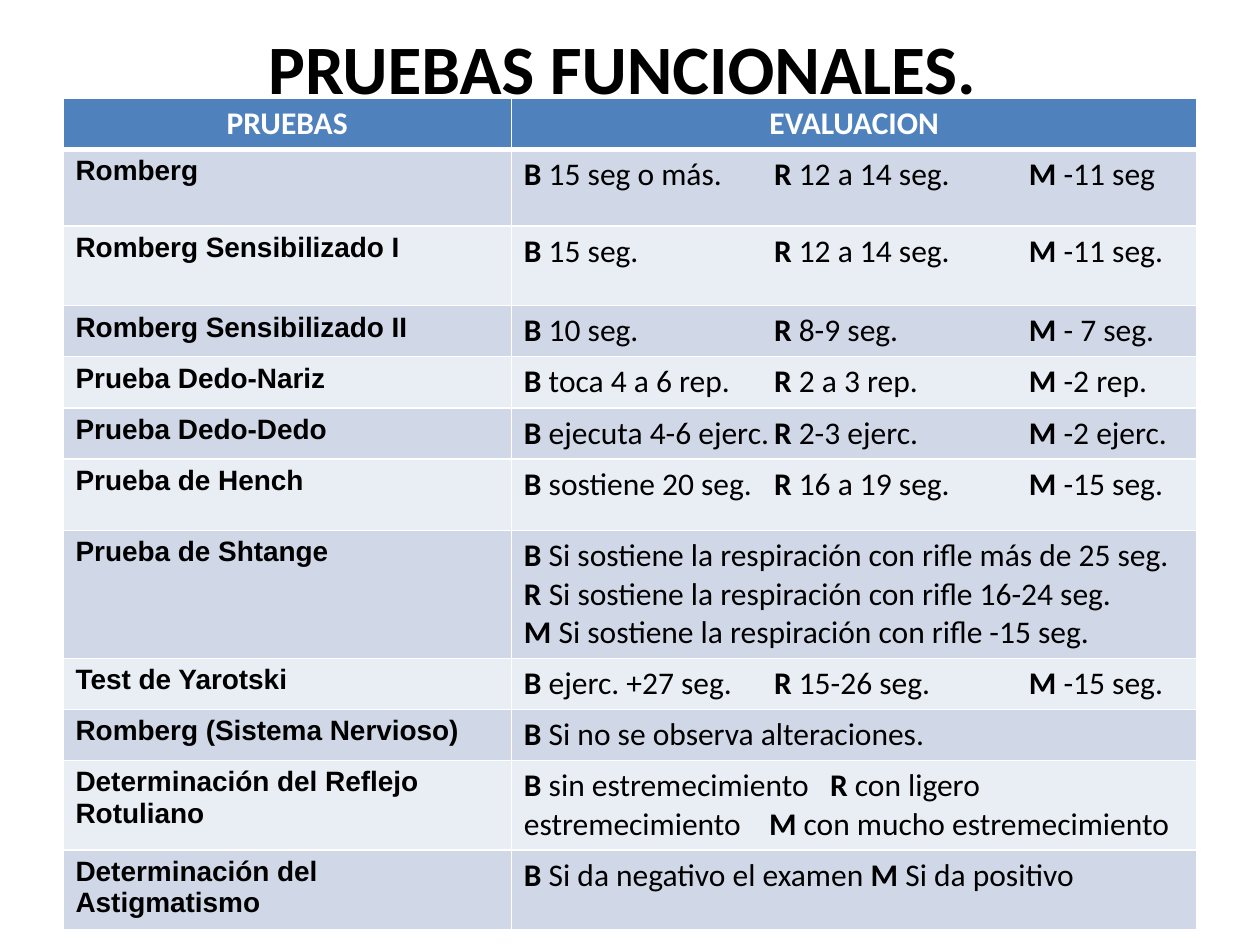
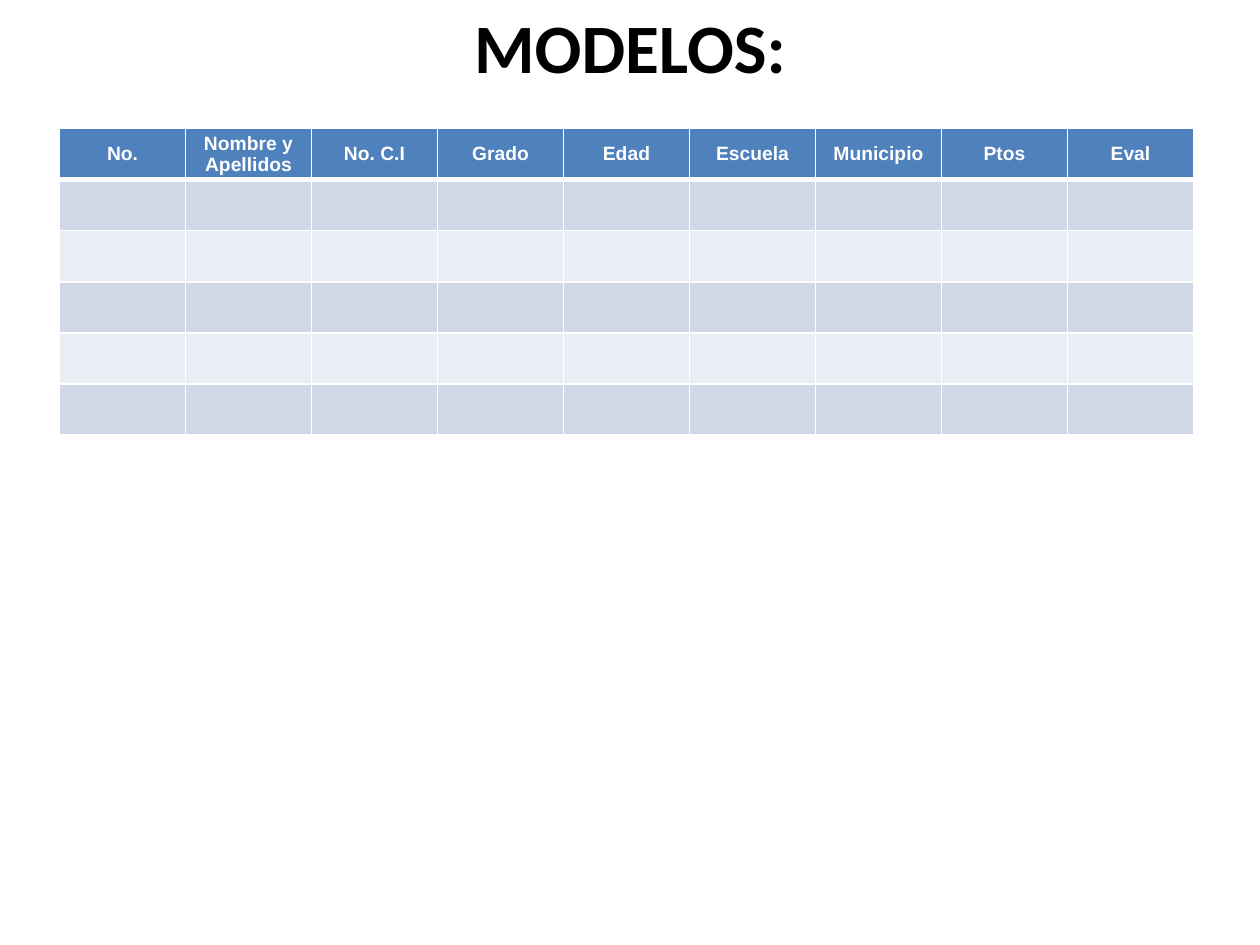
from lxml.etree import SubElement
from pptx import Presentation
from pptx.dml.color import RGBColor
from pptx.enum.text import MSO_ANCHOR as Anchor, PP_ALIGN as Align
from pptx.oxml.ns import qn
from pptx.util import Cm, Pt

# Content
TESTS_TITLE = "PRUEBAS FUNCIONALES. "
TESTS_HEADER = ["PRUEBAS", "EVALUACION"]
LINE, TALL = 1.03, 1.55  # row heights in cm
GRADE_STOPS = [5.04, 10.18]
REFLEX_STOPS = [4.94, 6.17]

# Test, row height, evaluation lines of (grade, criterion), tab stops
TESTS = [
    ("Romberg", TALL,
     [[("B", "15 seg o más."), ("R", "12 a 14 seg."), ("M", "-11 seg")]], GRADE_STOPS),
    ("Romberg Sensibilizado I", 1.6,
     [[("B", "15 seg."), ("R", "12 a 14 seg."), ("M", "-11 seg.")]], GRADE_STOPS),
    ("Romberg Sensibilizado II", LINE,
     [[("B", "10 seg."), ("R", "8-9 seg."), ("M", "- 7 seg.")]], GRADE_STOPS),
    ("Prueba Dedo-Nariz", LINE,
     [[("B", "toca 4 a 6 rep."), ("R", "2 a 3 rep."), ("M", "-2 rep.")]], GRADE_STOPS),
    ("Prueba Dedo-Dedo", LINE,
     [[("B", "ejecuta 4-6 ejerc."), ("R", "2-3 ejerc."), ("M", "-2 ejerc.")]], GRADE_STOPS),
    ("Prueba de Hench", 1.44,
     [[("B", "sostiene 20 seg."), ("R", "16 a 19 seg."), ("M", "-15 seg.")]], GRADE_STOPS),
    ("Prueba de Shtange", 2.58,
     [[("B", "Si sostiene la respiración con rifle más de 25 seg.")],
      [("R", "Si sostiene la respiración con rifle 16-24 seg.")],
      [("M", "Si sostiene la respiración con rifle -15 seg.")]], []),
    ("Test de Yarotski", LINE,
     [[("B", "ejerc. +27 seg."), ("R", "15-26 seg."), ("M", "-15 seg.")]], GRADE_STOPS),
    ("Romberg (Sistema Nervioso)", LINE,
     [[("B", "Si no se observa alteraciones.")]], []),
    ("Determinación del Reflejo Rotuliano", 1.8,
     [[("B", "sin estremecimiento"), ("R", "con ligero estremecimiento"),
       ("M", "con mucho estremecimiento")]], REFLEX_STOPS),
    ("Determinación del Astigmatismo", 1.5,
     [[("B", "Si da negativo el examen"), ("M", "Si da positivo")]], [6.99]),
]

FORMS_TITLE = "MODELOS:"
FORMS_HEADER = ["No.", "Nombre y Apellidos", "No. C.I", "Grado", "Edad",
                "Escuela", "Municipio", "Ptos", "Eval"]
EMPTY_ROWS = 5

# Shared style
COLORS = {"header": "4F81BD", "odd": "D0D8E8", "even": "E9EDF4",
          "border": "FFFFFF", "light": "FFFFFF", "dark": "000000"}
SLIDE_W, SLIDE_H = 25.4, 19.05
MARGIN = 1.27
CONTENT_W = SLIDE_W - 2 * MARGIN


def color(key):
    return RGBColor.from_string(COLORS[key])


def style(paragraph, font_name, size, color_key="dark", bold=None, align=None):
    paragraph.alignment = align
    font = paragraph.font
    font.name, font.size, font.bold = font_name, Pt(size), bold
    font.color.rgb = color(color_key)


def add_title(slide, text, top):
    box = slide.shapes.add_textbox(Cm(MARGIN), Cm(top), Cm(CONTENT_W), Cm(1.85))
    frame = box.text_frame
    frame.word_wrap = True
    frame.vertical_anchor = Anchor.MIDDLE
    frame.text = text
    style(frame.paragraphs[0], "Calibri", 39.6, bold=True, align=Align.CENTER)


def add_borders(cell, bottom):
    props = cell._tc.get_or_add_tcPr()
    for side, width in (("L", 1), ("R", 1), ("T", 1), ("B", bottom)):
        line = SubElement(props, qn(f"a:ln{side}"), w=str(Pt(width)))
        fill = SubElement(line, qn("a:solidFill"))
        SubElement(fill, qn("a:srgbClr"), val=COLORS["border"])


def add_banded_table(slide, left, top, widths, heights):
    frame = slide.shapes.add_table(len(heights), len(widths), Cm(left), Cm(top),
                                   Cm(sum(widths)), Cm(sum(heights)))
    table = frame.table
    for column, width in zip(table.columns, widths):
        column.width = Cm(width)
    for index, (row, height) in enumerate(zip(table.rows, heights)):
        row.height = Cm(height)
        band = "header" if index == 0 else "odd" if index % 2 else "even"
        for cell in row.cells:
            add_borders(cell, bottom=1 if index else 3)
            cell.fill.solid()
            cell.fill.fore_color.rgb = color(band)
    return table


def fill_header(table, labels, font_name, size):
    for cell, label in zip(table.rows[0].cells, labels):
        cell.text = label
        style(cell.text_frame.paragraphs[0], font_name, size, "light", True, Align.CENTER)


def add_tab_stops(paragraph, stops):
    if stops:
        tabs = SubElement(paragraph._p.get_or_add_pPr(), qn("a:tabLst"))
        for stop in stops:
            SubElement(tabs, qn("a:tab"), pos=str(Cm(stop)), algn="l")


def fill_evaluation(cell, lines, stops):
    frame = cell.text_frame
    for index, grades in enumerate(lines):
        paragraph = frame.add_paragraph() if index else frame.paragraphs[0]
        add_tab_stops(paragraph, stops)
        style(paragraph, "Calibri", 18)
        for position, (grade, criterion) in enumerate(grades):
            letter = paragraph.add_run()
            letter.text = ("\t" if position else "") + grade
            letter.font.bold = True
            paragraph.add_run().text = " " + criterion


def build_tests(slide):
    add_title(slide, TESTS_TITLE, 0.42)
    heights = [LINE] + [height for _, height, _, _ in TESTS]
    table = add_banded_table(slide, MARGIN, 1.98, [9.04, 13.82], heights)
    fill_header(table, TESTS_HEADER, "Calibri", 18)
    for row, (test, _, lines, stops) in enumerate(TESTS, start=1):
        name = table.cell(row, 0)
        name.text = test
        style(name.text_frame.paragraphs[0], "Arial", 16, bold=True)
        fill_evaluation(table.cell(row, 1), lines, stops)


def build_forms(slide):
    add_title(slide, FORMS_TITLE, 0)
    count = len(FORMS_HEADER)
    table = add_banded_table(slide, 1.2, 2.59, [CONTENT_W / count] * count,
                             [LINE] * (EMPTY_ROWS + 1))
    fill_header(table, FORMS_HEADER, "Arial", 11)
    for cell in table.rows[0].cells:
        cell.vertical_anchor = Anchor.MIDDLE
        cell.margin_left = cell.margin_right = Cm(0.1)
        cell.margin_top = cell.margin_bottom = 0


def main():
    deck = Presentation()
    deck.slide_width, deck.slide_height = Cm(SLIDE_W), Cm(SLIDE_H)
    for build in (build_tests, build_forms):
        build(deck.slides.add_slide(deck.slide_layouts[6]))
    deck.save("out.pptx")


if __name__ == "__main__":
    main()
